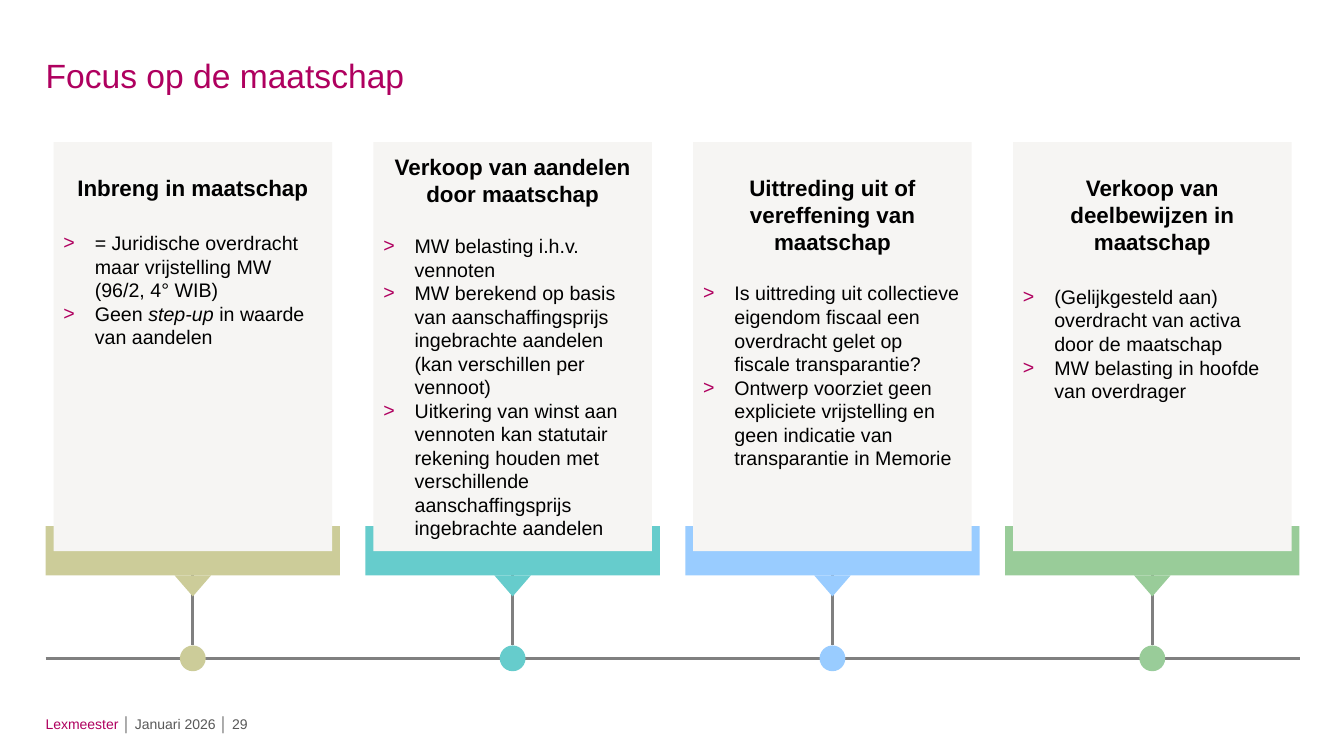
"""Build the timeline slide on the four tax moments of a maatschap."""
from lxml import etree
from pptx import Presentation
from pptx.dml.color import RGBColor
from pptx.enum import shapes, text
from pptx.oxml import ns
from pptx.util import Cm, Pt

COLOURS = {"accent": "AF005F", "footer": "595959", "body": "000000",
           "line": "808080", "card": "F6F5F3", "sand": "CCCC99",
           "teal": "66CCCC", "blue": "99CCFF", "green": "99CC99"}
FONT = "Arial"
LEFT, PITCH, BAND_WIDTH = 1.15, 8.06, 7.42
CARD_INSET, CARD_TOP, CARD_HEIGHT = 0.2, 3.58, 10.31
BAND_TOP, BAND_HEIGHT = 13.26, 1.24
BAND_BOTTOM = BAND_TOP + BAND_HEIGHT
AXIS_Y, DOT = 16.59, 0.65
POINTER_WIDTH, POINTER_HEIGHT = 0.92, 0.53
INDENT = 0.79

STAGES = [
    {"colour": "sand", "heading": "Inbreng in maatschap",
     "anchor": text.MSO_ANCHOR.TOP, "inset": 0.81, "gap": 21.5,
     "points": ["= Juridische overdracht maar vrijstelling MW (96/2, 4° WIB)",
                "Geen *step-up* in waarde van aandelen"]},
    {"colour": "teal", "heading": "Verkoop van aandelen door maatschap",
     "anchor": text.MSO_ANCHOR.MIDDLE, "inset": 0.13, "gap": 19,
     "points": ["MW belasting i.h.v. vennoten",
                "MW berekend op basis van aanschaffingsprijs ingebrachte "
                "aandelen (kan verschillen per vennoot)",
                "Uitkering van winst aan vennoten kan statutair rekening "
                "houden met verschillende aanschaffingsprijs ingebrachte "
                "aandelen"]},
    {"colour": "blue", "heading": "Uittreding uit of vereffening van maatschap",
     "anchor": text.MSO_ANCHOR.TOP, "inset": 0.81, "gap": 19,
     "points": ["Is uittreding uit collectieve eigendom fiscaal een "
                "overdracht gelet op fiscale transparantie?",
                "Ontwerp voorziet geen expliciete vrijstelling en geen "
                "indicatie van transparantie in Memorie"]},
    {"colour": "green", "heading": "Verkoop van deelbewijzen in maatschap",
     "anchor": text.MSO_ANCHOR.TOP, "inset": 0.81, "gap": 21.5,
     "points": ["(Gelijkgesteld aan) overdracht van activa door de maatschap",
                "MW belasting in hoofde van overdrager"]},
]


def rgb(name):
    return RGBColor.from_string(COLOURS[name])


def format_run(run, size, colour, bold=False, italic=False):
    run.font.name = FONT
    run.font.size = Pt(size)
    run.font.color.rgb = rgb(colour)
    run.font.bold = bold
    run.font.italic = italic


def add_block(slide, kind, left, top, width, height, colour):
    block = slide.shapes.add_shape(kind, Cm(left), Cm(top), Cm(width), Cm(height))
    block.shadow.inherit = False
    block.fill.solid()
    block.fill.fore_color.rgb = rgb(colour)
    block.line.fill.background()
    return block


def add_rule(slide, x1, y1, x2, y2):
    rule = slide.shapes.add_connector(
        shapes.MSO_CONNECTOR.STRAIGHT, Cm(x1), Cm(y1), Cm(x2), Cm(y2))
    rule.line.color.rgb = rgb("line")
    rule.line.width = Pt(2)
    etree.SubElement(rule._element.spPr, ns.qn("a:effectLst"))


def add_bullet(paragraph):
    props = paragraph._p.get_or_add_pPr()
    props.set("marL", str(Cm(INDENT)))
    props.set("indent", str(-Cm(INDENT)))
    colour = etree.SubElement(props, ns.qn("a:buClr"))
    etree.SubElement(colour, ns.qn("a:srgbClr"), val=COLOURS["accent"])
    etree.SubElement(props, ns.qn("a:buFont"), typeface=FONT)
    etree.SubElement(props, ns.qn("a:buChar"), char=">")


def write_card(card, stage):
    frame = card.text_frame
    frame.word_wrap = True
    frame.vertical_anchor = stage["anchor"]
    frame.margin_top = Cm(stage["inset"])
    heading = frame.paragraphs[0]
    heading.text = stage["heading"]
    heading.alignment = text.PP_ALIGN.CENTER
    heading.space_after = Pt(stage["gap"])
    format_run(heading.runs[0], 16, "body", bold=True)
    for point in stage["points"]:
        paragraph = frame.add_paragraph()
        paragraph.alignment = text.PP_ALIGN.LEFT
        add_bullet(paragraph)
        for index, part in enumerate(point.split("*")):
            run = paragraph.add_run()
            run.text = part
            format_run(run, 14, "body", italic=index % 2 == 1)


def add_stage(slide, left, stage):
    colour = stage["colour"]
    centre = left + BAND_WIDTH / 2
    add_rule(slide, centre, BAND_BOTTOM, centre, AXIS_Y - DOT / 2)
    add_block(slide, shapes.MSO_SHAPE.RECTANGLE, left, BAND_TOP,
              BAND_WIDTH, BAND_HEIGHT, colour)
    card = add_block(slide, shapes.MSO_SHAPE.RECTANGLE, left + CARD_INSET,
                     CARD_TOP, BAND_WIDTH - 2 * CARD_INSET, CARD_HEIGHT, "card")
    write_card(card, stage)
    add_block(slide, shapes.MSO_SHAPE.FLOWCHART_MERGE, centre - POINTER_WIDTH / 2,
              BAND_BOTTOM, POINTER_WIDTH, POINTER_HEIGHT, colour)
    add_block(slide, shapes.MSO_SHAPE.OVAL, centre - DOT / 2, AXIS_Y - DOT / 2,
              DOT, DOT, colour)


def write_title(slide):
    title = slide.shapes.title
    title.left, title.top, title.width, title.height = (
        Cm(LEFT), Cm(1.04), Cm(31.6), Cm(1.68))
    frame = title.text_frame
    frame.text = "Focus op de maatschap"
    frame.margin_left = 0
    frame.vertical_anchor = text.MSO_ANCHOR.MIDDLE
    frame.paragraphs[0].alignment = text.PP_ALIGN.LEFT
    format_run(frame.paragraphs[0].runs[0], 24, "accent")


def add_footer(slide):
    footer = slide.shapes.add_textbox(Cm(LEFT), Cm(17.91), Cm(8.61), Cm(0.56))
    frame = footer.text_frame
    frame.margin_left = frame.margin_bottom = 0
    frame.vertical_anchor = text.MSO_ANCHOR.MIDDLE
    for words, colour in (("Lexmeester ", "accent"),
                          ("│ Januari 2026 │ 29", "footer")):
        run = frame.paragraphs[0].add_run()
        run.text = words
        format_run(run, 10, colour)


def main():
    deck = Presentation()
    deck.slide_width, deck.slide_height = Cm(33.87), Cm(19.05)
    slide = deck.slides.add_slide(deck.slide_layouts[5])
    write_title(slide)
    add_footer(slide)
    axis_end = LEFT + (len(STAGES) - 1) * PITCH + BAND_WIDTH
    add_rule(slide, LEFT, AXIS_Y, axis_end, AXIS_Y)
    for index, stage in enumerate(STAGES):
        add_stage(slide, LEFT + index * PITCH, stage)
    deck.save("out.pptx")


if __name__ == "__main__":
    main()
